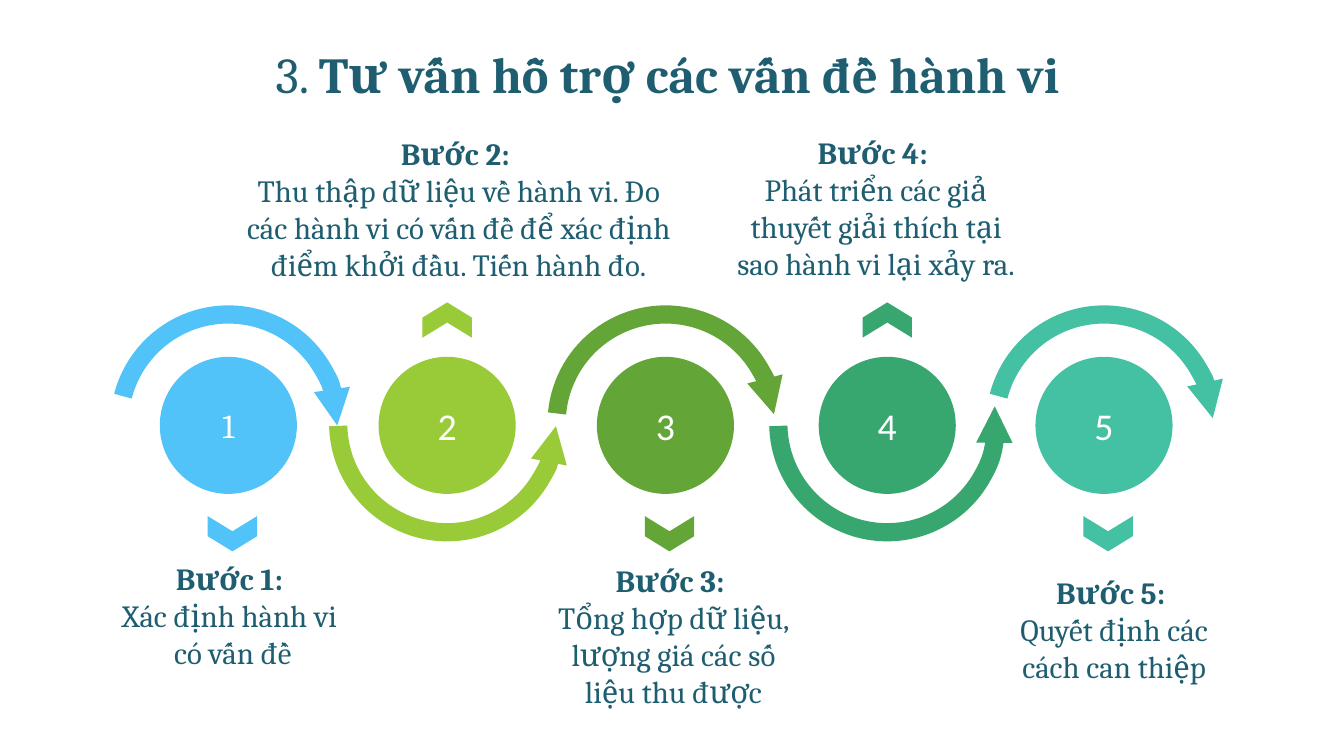
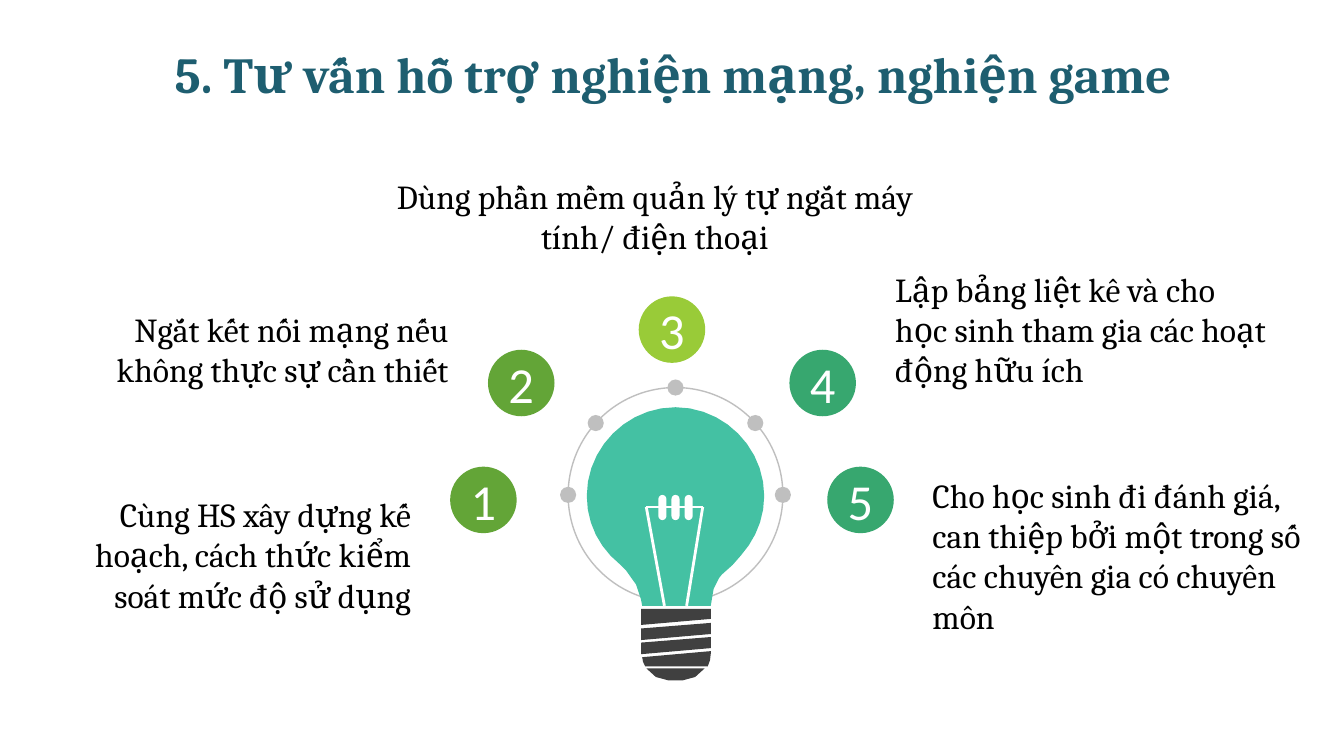
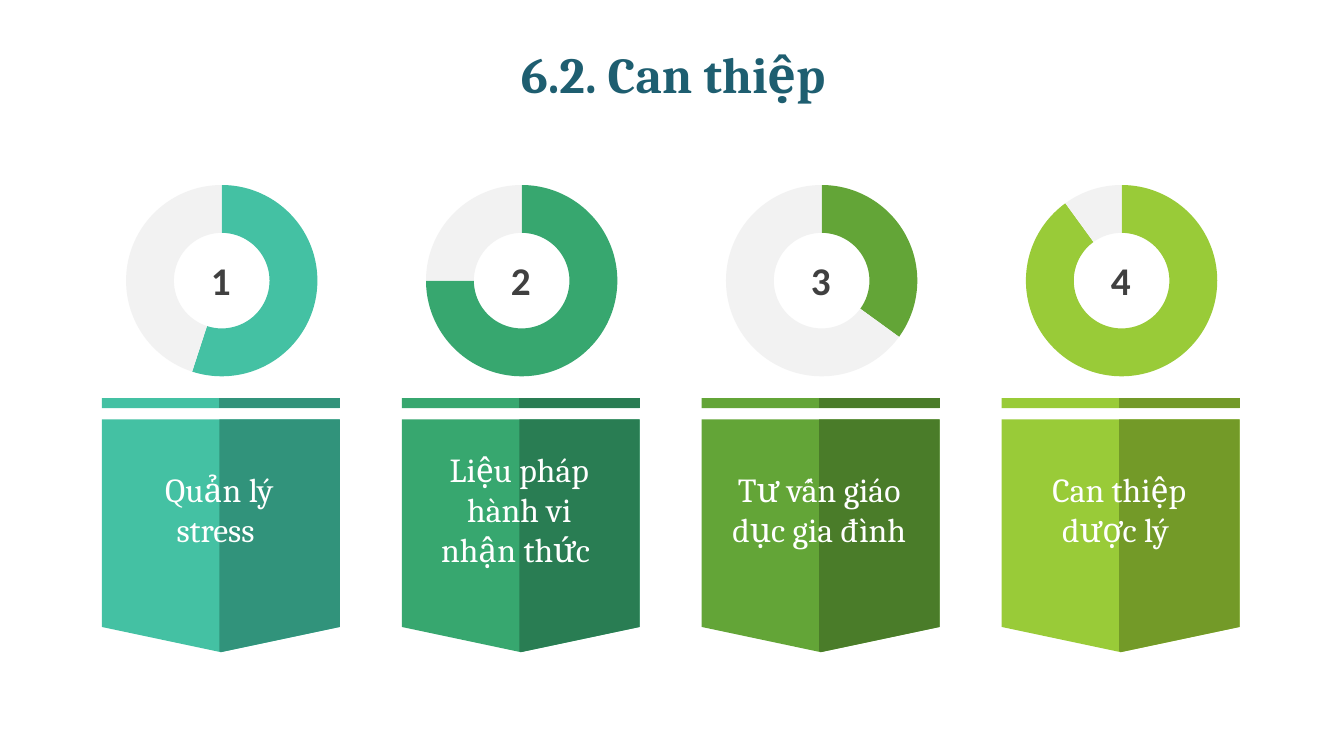
from math import comb, cos, dist, sin, radians
from lxml.etree import SubElement as sub
from pptx import Presentation
from pptx.chart.data import CategoryChartData as Data
from pptx.dml.color import RGBColor
from pptx.enum.chart import XL_CHART_TYPE as Chart
from pptx.enum.shapes import MSO_CONNECTOR as Link, MSO_SHAPE as Kind
from pptx.enum.text import MSO_ANCHOR as Anchor, PP_ALIGN as Align
from pptx.oxml.ns import qn
from pptx.util import Inches, Pt

# Grid: square cells, 133.3 columns by 75 rows
CELL = Inches(0.1)
COLS, ROWS = 133.3, 75

# Shared colours and text formats
hue = RGBColor.from_string
INK, WHITE, BLACK, DARK, GREY, PALE = "1E5E70", "FFFFFF", "000000", "404040", "BFBFBF", "F2F2F2"
SKY, LIME, GREEN, JADE, TEAL = "51C3F9", "99CB38", "63A537", "37A76F", "44C1A3"
HEAD = {"size": Pt(36), "name": "Cambria"}
STEP = {"size": Pt(22), "name": "Cambria"}
BODY = {"size": Pt(24), "name": "Cambria"}
MID, TOP = Anchor.MIDDLE, Anchor.TOP


def draw(page, kind, box, fill=None, line=None, text=(), font=BODY, ink=WHITE,
         align=Align.CENTER, anchor=MID):
    """Add a shape, or a text box when kind is None; text is paragraphs of (words, bold) runs."""
    spot = [int(n * CELL) for n in box]
    if kind is None:
        item = page.shapes.add_textbox(*spot)
    else:
        item = page.shapes.add_shape(kind, *spot)
        item.shadow.inherit = False
        item.fill.background()
        item.line.fill.background()
    if fill:
        item.fill.solid()
        item.fill.fore_color.rgb = hue(fill)
    if line:
        item.line.color.rgb, item.line.width = hue(line[0]), Pt(line[1])
    frame = item.text_frame
    for key, val in {"word_wrap": True, "vertical_anchor": anchor}.items():
        setattr(frame, key, val)
    for i, runs in enumerate(text):
        para = frame.paragraphs[0] if i == 0 else frame.add_paragraph()
        para.alignment = align
        for words, bold in runs:
            run = para.add_run()
            run.text = words
            run.font.color.rgb = hue(ink)
            for key, val in {**font, "bold": bold}.items():
                setattr(run.font, key, val)
    return item


def trace(page, fill, *loops):
    """Add one outline of closed loops; a loop is a start, then (end,) lines or three-point curves."""
    pen = None
    for start, *parts in loops:
        pts = [start]
        for part in parts:
            knots, deg = [pts[-1], *part], len(part)
            steps = 1 if deg == 1 else max(2, round(dist(knots[0], knots[-1]) / 1.3))
            for s in range(1, steps + 1):
                t = s / steps
                mix = [comb(deg, k) * t**k * (1 - t)**(deg - k) for k in range(deg + 1)]
                pts.append(tuple(sum(m * p[a] for m, p in zip(mix, knots)) for a in (0, 1)))
        pts = [(x * CELL, y * CELL) for x, y in pts]
        if pen:
            pen.move_to(*pts[0])
        else:
            pen = page.shapes.build_freeform(*pts[0])
        pen.add_line_segments(pts[1:], close=True)
    item = pen.convert_to_shape()
    item.shadow.inherit = False
    item.fill.solid()
    item.fill.fore_color.rgb = hue(fill)
    item.line.fill.background()


deck = Presentation()
deck.slide_width, deck.slide_height = int(COLS * CELL), int(ROWS * CELL)

# Pages and their titles
pages = []
for runs in (
    [("3. ", False), ("Tư vấn hỗ trợ các vấn đề hành vi ", True)],
    [("5. Tư vấn hỗ trợ nghiện mạng, nghiện game", True)],
    [("6.2. Can thiệp", True)],
):
    page = deck.slides.add_slide(deck.slide_layouts[6])
    title = draw(page, None, (3.5, 3.7, 126.5, 7.9), text=[runs], font=HEAD, ink=INK)
    for key, val in {"line_spacing": 0.9, "space_before": Pt(10)}.items():
        setattr(title.text_frame.paragraphs[0], key, val)
    pages.append(page)
steps, bulb, care = pages

# Five steps: colour, middle, arc ends, caption box, caption lines
flow = [
    (SKY, 22.65, (62.66, 162.69), (10.6, 55.05, 25, 12.1), ["Xác định hành vi ", "có vấn đề"]),
    (LIME, 44.35, (54.79, 161.1), (22.65, 12.85, 45.7, 15.8),
     ["Thu thập dữ liệu về hành vi. Đo các hành vi có vấn đề để xác định điểm khởi đầu. Tiến hành đo."]),
    (GREEN, 66, (57.11, 159.12), (53.3, 55.2, 27, 15.8),
     ["Tổng hợp dữ liệu, lượng giá các số liệu thu được"]),
    (JADE, 88, (54.79, 167.41), (71.1, 12.8, 31.6, 15.8),
     ["Phát triển các giả thuyết giải thích tại sao hành vi lại xảy ra."]),
    (TEAL, 109.5, (62.66, 160.37), (98.8, 56.45, 23.4, 12.1), ["Quyết định các cách can thiệp"]),
]
for i, (tint, mid, ends, box, lines) in enumerate(flow):
    up = i % 2 == 1
    arc = draw(steps, Kind.ARC, (mid - 10.8, 31.2, 21.6, 21.6), line=(tint, 13))
    arc.rotation = 90
    arc.adjustments[0], arc.adjustments[1] = ends
    prop = arc._element.spPr
    if up:
        prop.find(qn("a:xfrm")).set("flipH", "1")
    sub(prop.find(qn("a:ln")), qn("a:tailEnd"), type="triangle", w="sm", len="sm")
    face = {"size": Pt(27), "name": "Calibri"} if i else BODY
    draw(steps, Kind.OVAL, (mid - 6.8, 35.4, 13.6, 13.6), tint, text=[[(str(i + 1), False)]], font=face)
    mark = draw(steps, Kind.CHEVRON, (mid - 1.75 + 0.4 * (not up), 29.3 if up else 50.5, 3.5, 4.9), tint)
    mark.rotation = 270 if up else 90
    mark.adjustments[0] = 0.43
    text = [[(f"Bước {i + 1}: ", True)]] + [[(row, False)] for row in lines]
    draw(steps, None, box, text=text, font=STEP, ink=INK, anchor=TOP)

# Ring with dots
cx, cy, rad = 67, 49.1, 10.65
draw(bulb, Kind.OVAL, (cx - rad, cy - rad, 2 * rad, 2 * rad), line=(GREY, 1))
for deg in (0, 42, 90, 138, 180):
    x, y = cx + rad * cos(radians(deg)), cy - rad * sin(radians(deg))
    draw(bulb, Kind.OVAL, (x - 0.8, y - 0.8, 1.6, 1.6), GREY)

# Glass
trace(bulb, TEAL, [
    (67, 40.4), [(71.8, 40.4), (75.8, 44.4), (75.8, 49.2)], [(75.8, 51.5), (74.9, 53.5), (73.5, 55.1)],
    [(73, 55.7), (72.4, 56.4), (71.6, 57)], [(71.6, 57), (70.5, 58.1), (70.5, 60.1)],
    [(63.7, 60.1)], [(63.7, 60.1), (63.4, 57.7), (62.1, 56.6)],
    [(61.9, 56.4)], [(61.5, 56)], [(59.5, 54.4), (58.2, 52), (58.2, 49.2)],
    [(58.2, 44.4), (62.2, 40.4), (67, 40.4)]])

# Screw threads and cap
west, east = 63.6, 70.5
bands = [[(east, y), [(east, y + 1.1)], [(west, y + 1.7)], [(west, y + 0.55)]] for y in (63.2, 61.8)]
trace(bulb, DARK,
      [(east, 64.6), [(east, 64.8)], [(70.5, 65.3), (70.4, 65.7), (70.2, 66.1)],
       [(64, 66.1)], [(63.8, 65.8), (63.7, 65.5), (63.7, 65.2)]],
      *bands,
      [(west, 60.4), [(east, 60.4)], [(east, 61.4)], [(west, 62)]])
trace(bulb, DARK, [(64.1, 66.3), [(69.9, 66.3)], [(69.4, 67), (68.6, 67.5), (67.7, 67.5)],
                   [(66.3, 67.5)], [(65.4, 67.5), (64.6, 67), (64.1, 66.3)]])

# Filament
for ends in ((64.1, 50.3, 65.9, 60.1), (69.7, 50.3, 68.1, 60.1), (64.1, 50.3, 69.7, 50.3)):
    wire = bulb.shapes.add_connector(Link.STRAIGHT, *[int(n * CELL) for n in ends])
    wire.line.color.rgb, wire.line.width = hue(WHITE), Pt(2)
    sub(wire._element.spPr, qn("a:effectLst"))
for i in range(3):
    coil = draw(bulb, Kind.ROUNDED_RECTANGLE, (65.3 + 1.3 * i, 49.1, 0.8, 2.5), WHITE)
    coil.adjustments[0] = 0.5

# Numbered tips: colour, shift from the middle, top, caption box, side, words
tips = [
    (GREEN, -18.7, 46.3, (5.35, 48.5, 36.4, 13.1), Align.RIGHT,
     "Cùng HS xây dựng kế hoạch, cách thức kiểm soát mức độ sử dụng"),
    (GREEN, -14.95, 34.7, (8.25, 30.15, 37.2, 9.1), Align.RIGHT,
     "Ngắt kết nối mạng nếu không thực sự cần thiết"),
    (LIME, 0, 29.4, (37.15, 16.95, 55.6, 9.1), Align.CENTER,
     "Dùng phần mềm quản lý tự ngắt máy tính/ điện thoại"),
    (JADE, 14.95, 34.7, (87.8, 26.15, 38.8, 13.1), Align.LEFT,
     "Lập bảng liệt kê và cho học sinh tham gia các hoạt động hữu ích"),
    (JADE, 18.7, 46.3, (91.5, 46.6, 38.6, 17.2), Align.LEFT,
     "Cho học sinh đi đánh giá, can thiệp bởi một trong số các chuyên gia có chuyên môn"),
]
for i, (tint, shift, top, box, side, words) in enumerate(tips, 1):
    draw(bulb, Kind.OVAL, (COLS / 2 + shift - 3.3, top, 6.6, 6.6), tint,
         text=[[(str(i), False)]], font={"size": Pt(36), "name": "Calibri"})
    draw(bulb, None, box, text=[[(words, False)]], ink=BLACK, align=side, anchor=TOP)

# Four banners, each under a ring chart: light, dark, share, caption rows, words
cards = [
    (TEAL, "31937B", 55, 2, "Quản lý stress "),
    (JADE, "297D53", 75, 3, "Liệu pháp hành vi nhận thức "),
    (GREEN, "4A7C29", 35, 3, "Tư vấn giáo dục gia đình "),
    (LIME, "739A28", 90, 2, "Can thiệp dược lý "),
]
for i, (tint, dark, share, rows, words) in enumerate(cards):
    x = 10.1 + 29.75 * i
    fold, tip, end = x + 11.65, (x + 11.8, 64.7), x + 23.6
    draw(care, Kind.RECTANGLE, (x, 39.5, 23.6, 1), tint)
    trace(care, dark, [(fold, 39.5), [(end, 39.5)], [(end, 40.5)], [(fold, 40.5)]])
    for left, low, fill in ((x, 62.2, tint), (fold, 64.6, dark)):
        trace(care, fill, [(left, 41.6), [(end, 41.6)], [(end, 62.2)], [tip], [(left, low)]])
    tall = 1 + 4.05 * rows
    draw(care, None, (x + 1.9, 50.5 - tall / 2, 19.5, tall), text=[[(words, False)]])

    data = Data()
    data.categories = ["1", "2"]
    data.add_series("Series 1", (share, 100 - share))
    spot = [int(n * CELL) for n in (x + 1.25, 16.55, 21.3, 22.6)]
    chart = care.shapes.add_chart(Chart.DOUGHNUT, *spot, data).chart
    for key, val in {"has_legend": False, "has_title": False}.items():
        setattr(chart, key, val)
    for key, val in {"size": Pt(18), "name": "Calibri"}.items():
        setattr(chart.font, key, val)
    chart.font.color.rgb = hue(BLACK)
    plot = chart.plots[0]
    plot.vary_by_categories = True
    for k, fill in enumerate((tint, PALE)):
        look = plot.series[0].points[k].format
        look.fill.solid()
        look.fill.fore_color.rgb = hue(fill)
        look.line.fill.background()
    area = chart._chartSpace.find(".//" + qn("c:plotArea"))
    area.find(".//" + qn("c:holeSize")).set("val", "60")
    for old in area.findall(qn("c:layout")):
        area.remove(old)
    lay = sub(area, qn("c:layout"))
    area.insert(0, lay)
    man = sub(lay, qn("c:manualLayout"))
    for tag, val in (("layoutTarget", "inner"), ("xMode", "edge"), ("yMode", "edge"),
                     ("x", "0.05"), ("y", "0.08"), ("w", "0.9"), ("h", "0.84")):
        sub(man, qn("c:" + tag), val=val)
    draw(care, None, (x + 6.7, 24.9, 10.2, 5.7), text=[[(str(i + 1), True)]],
         font={"size": Pt(28), "name": "Calibri"}, ink=DARK)

deck.save("out.pptx")
